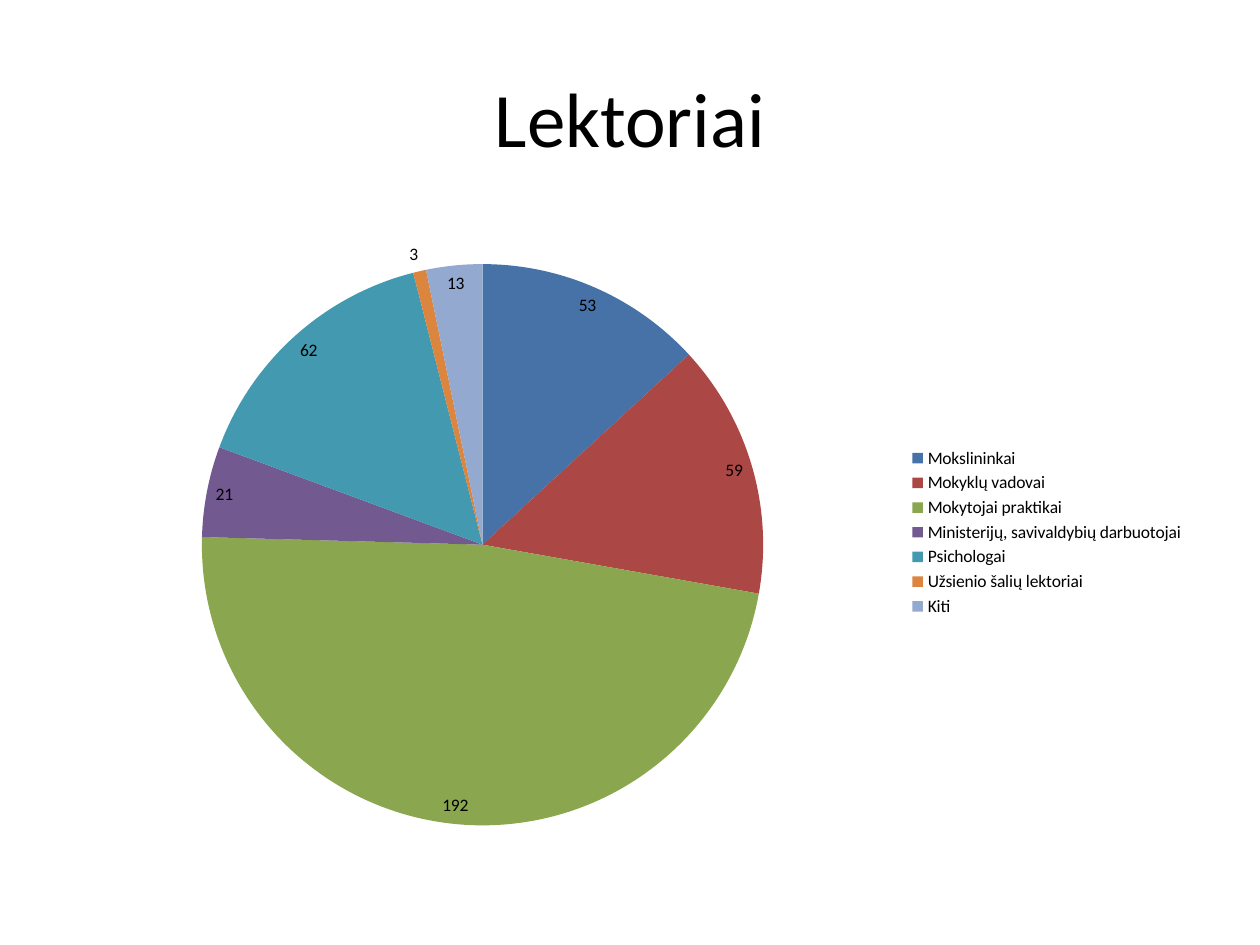
from lxml import etree
from pptx import Presentation
from pptx.chart.data import CategoryChartData
from pptx.dml.color import RGBColor
from pptx.enum.chart import XL_CHART_TYPE as ChartType
from pptx.enum.chart import XL_LABEL_POSITION as LabelPosition
from pptx.enum.chart import XL_LEGEND_POSITION as LegendPosition
from pptx.enum.text import MSO_ANCHOR as Anchor
from pptx.enum.text import PP_ALIGN as Align
from pptx.oxml.ns import qn
from pptx.util import Pt

FONT = "Calibri"
BLACK = RGBColor(0x00, 0x00, 0x00)
BLUE = RGBColor(0x46, 0x72, 0xA8)
RED = RGBColor(0xAB, 0x47, 0x44)
GREEN = RGBColor(0x8A, 0xA6, 0x4F)
PURPLE = RGBColor(0x72, 0x59, 0x90)
TEAL = RGBColor(0x42, 0x99, 0xB0)
ORANGE = RGBColor(0xDC, 0x85, 0x3E)
PALE_BLUE = RGBColor(0x93, 0xA9, 0xCF)

LECTURERS = [
    ("Mokslininkai", 53, BLUE),
    ("Mokyklų vadovai", 59, RED),
    ("Mokytojai praktikai", 192, GREEN),
    ("Ministerijų, savivaldybių darbuotojai", 21, PURPLE),
    ("Psichologai", 62, TEAL),
    ("Užsienio šalių lektoriai", 3, ORANGE),
    ("Kiti", 13, PALE_BLUE),
]


def style_font(font, size):
    font.name = FONT
    font.size = Pt(size)
    font.color.rgb = BLACK


def add_title(slide, left, top, width, height):
    frame = slide.shapes.add_textbox(Pt(left), Pt(top), Pt(width), Pt(height)).text_frame
    frame.word_wrap = True
    frame.vertical_anchor = Anchor.MIDDLE
    heading = frame.paragraphs[0]
    heading.text = "Lektoriai"
    heading.alignment = Align.CENTER
    style_font(heading.font, 44)


def place_plot(chart, **fractions):
    """Fix the inner plot area as fractions (x, y, w, h) of the chart."""
    plot_area = chart.plots[0]._element.getparent()
    layout = plot_area.find(qn("c:layout"))
    if layout is None:
        layout = etree.Element(qn("c:layout"))
        plot_area.insert(0, layout)
    manual = etree.SubElement(layout, qn("c:manualLayout"))
    settings = {"layoutTarget": "inner", "xMode": "edge", "yMode": "edge", **fractions}
    for tag, setting in settings.items():
        etree.SubElement(manual, qn(f"c:{tag}")).set("val", str(setting))


def add_lecturer_pie(slide, left, top, width, height):
    names, counts, colors = zip(*LECTURERS)
    pie_data = CategoryChartData()
    pie_data.categories = names
    pie_data.add_series("Series 1", counts)
    chart = slide.shapes.add_chart(
        ChartType.PIE, Pt(left), Pt(top), Pt(width), Pt(height), pie_data
    ).chart
    style_font(chart.font, 10)
    chart.has_title = False
    place_plot(chart, x=0.12, y=0.07, w=0.5, h=0.9)

    # Legend
    chart.has_legend = True
    chart.legend.position = LegendPosition.RIGHT
    chart.legend.include_in_layout = False

    # Slices
    pie = chart.plots[0]
    pie.vary_by_categories = True
    for index, color in enumerate(colors):
        fill = pie.series[0].points[index].format.fill
        fill.solid()
        fill.fore_color.rgb = color

    # Value labels
    pie.has_data_labels = True
    labels = pie.data_labels
    labels.show_value = True
    labels.show_percentage = False
    labels.position = LabelPosition.BEST_FIT
    style_font(labels.font, 10)


def main():
    deck = Presentation()
    deck.slide_width, deck.slide_height = Pt(720), Pt(540)
    slide = deck.slides.add_slide(deck.slide_layouts[6])
    add_title(slide, 36, 21.6, 648, 90)
    add_lecturer_pie(slide, 36, 126, 648, 356.4)
    deck.save("out.pptx")


if __name__ == "__main__":
    main()
